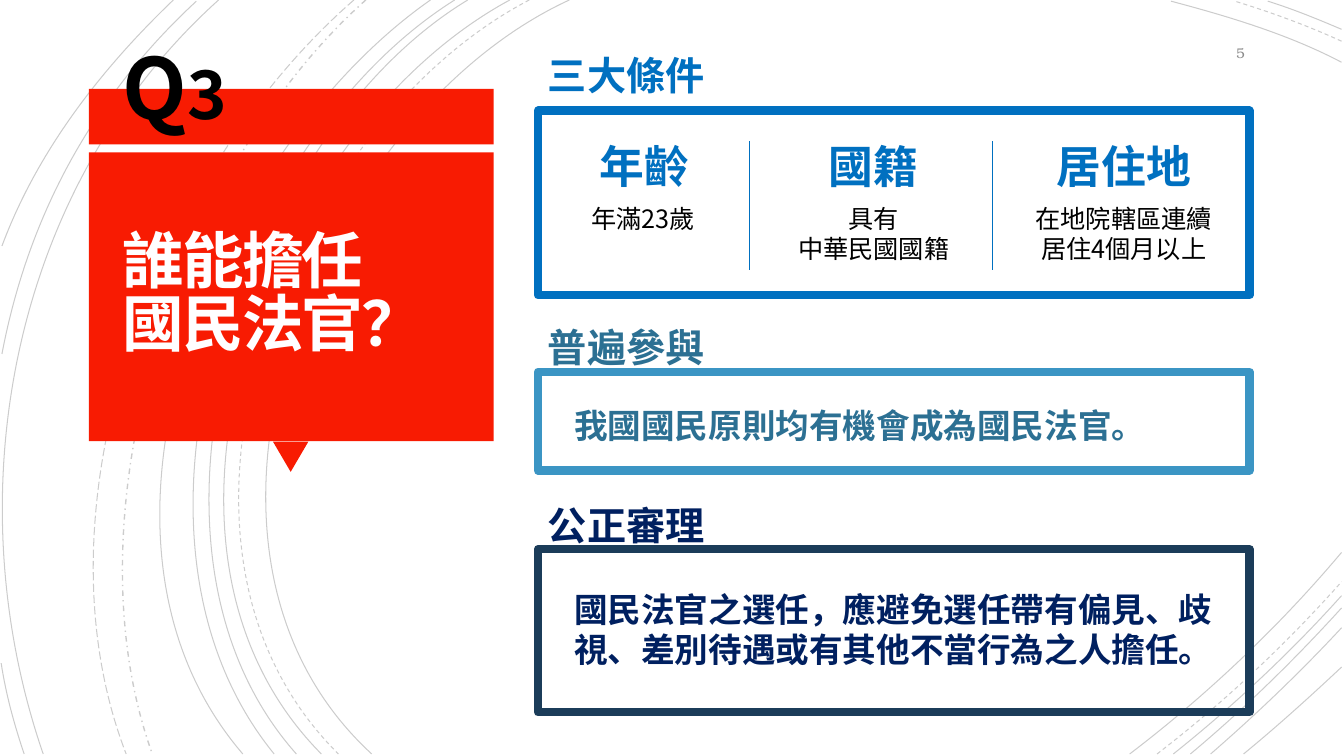
from dataclasses import dataclass

from lxml.etree import SubElement
from pptx import Presentation
from pptx.dml.color import RGBColor
from pptx.enum.dml import MSO_LINE
from pptx.enum.shapes import MSO_CONNECTOR, MSO_SHAPE
from pptx.enum.text import MSO_ANCHOR, PP_ALIGN
from pptx.oxml.ns import qn
from pptx.util import Cm, Pt


@dataclass(frozen=True)
class Theme:
    font: str = "Noto Sans CJK SC"
    number_font: str = "TeX Gyre Bonum"
    black: str = "000000"
    grey: str = "8C8C8C"
    white: str = "FFFEFF"
    red: str = "F81B02"
    blue: str = "0070C0"
    sky: str = "3B95C4"
    teal: str = "2C7093"
    slate: str = "1B3C59"
    navy: str = "002060"
    q_size: int = 60
    digit_size: int = 48
    title_size: int = 44
    condition_size: int = 32
    heading_size: int = 28
    body_size: int = 24
    detail_size: int = 18
    number_size: int = 10
    border: float = 6
    hairline: float = 0.75


THEME = Theme()


def add_run(p, text, size, color=THEME.black, bold=False, font=THEME.font, spacing=0):
    """Append text to a paragraph with its format."""
    r = p.add_run()
    r.text = text
    r.font.size, r.font.bold, r.font.name = Pt(size), bold, font
    r.font.color.rgb = RGBColor.from_string(color)
    SubElement(r.font._element, qn("a:ea"), typeface=font)
    if spacing:
        r.font._element.set("spc", str(int(spacing * 100)))


class SlideBuilder:
    def __init__(self, slide, theme):
        self.shapes, self.theme = slide.shapes, theme

    def text(self, box, text, size, align=PP_ALIGN.LEFT, anchor=MSO_ANCHOR.TOP,
             wrap=True, inset=None, line_spacing=None, **fmt):
        """Text box: \\n parts paragraphs, \\v breaks a line. Returns the last paragraph."""
        tf = self.shapes.add_textbox(*map(Cm, box)).text_frame
        tf.word_wrap, tf.vertical_anchor = wrap, anchor
        if inset is not None:
            tf.margin_left = tf.margin_right = tf.margin_top = tf.margin_bottom = Cm(inset)
        for i, line in enumerate(text.split("\n")):
            p = tf.add_paragraph() if i else tf.paragraphs[0]
            p.alignment, p.line_spacing = align, line_spacing
            for j, part in enumerate(line.split("\v")):
                if j:
                    p.add_line_break()
                add_run(p, part, size, **fmt)
        return p

    def shape(self, kind, box, fill=None, line=None, rotation=0):
        sp = self.shapes.add_shape(kind, *map(Cm, box))
        sp.shadow.inherit = False
        sp.rotation = rotation
        if fill:
            sp.fill.solid()
            sp.fill.fore_color.rgb = RGBColor.from_string(fill)
        else:
            sp.fill.background()
        if line:
            sp.line.color.rgb = RGBColor.from_string(line)
            sp.line.width = Pt(self.theme.border)
        else:
            sp.line.fill.background()

    def divider(self, x, top, bottom):
        ln = self.shapes.add_connector(MSO_CONNECTOR.STRAIGHT, Cm(x), Cm(top), Cm(x), Cm(bottom))
        ln.line.color.rgb = RGBColor.from_string(self.theme.blue)
        ln.line.width = Pt(self.theme.hairline)
        SubElement(ln._element.spPr, qn("a:effectLst"))

    def arc(self, points, dash=None, width=THEME.hairline):
        """Faint cubic curve through start, two control points and end."""
        start, *rest = [(Cm(x), Cm(y)) for x, y in points]
        builder = self.shapes.build_freeform(*start)
        builder.add_line_segments(rest, close=False)
        sp = builder.convert_to_shape()
        outline = sp._element.find(".//" + qn("a:path"))
        bezier = SubElement(outline, qn("a:cubicBezTo"))
        for segment in outline.findall(qn("a:lnTo")):
            bezier.append(segment[0])
            outline.remove(segment)
        sp.shadow.inherit = False
        sp.fill.background()
        sp.line.color.rgb = RGBColor.from_string(self.theme.black)
        sp.line.width = Pt(width)
        color = sp.line._ln.find(".//" + qn("a:srgbClr"))
        SubElement(color, qn("a:alpha"), val="20000")
        if dash:
            sp.line.dash_style = dash

    def section(self, heading, top, height, color, border, lift):
        """Framed block with its heading centred lift above the frame."""
        t = self.theme
        self.text((13.56, top - lift - 1.03, 18.6, 2.06), heading, t.heading_size,
                  anchor=MSO_ANCHOR.MIDDLE, color=color, bold=True)
        self.shape(MSO_SHAPE.RECTANGLE, (13.56, top, 17.93, height), line=border)


# Left arcs run from the top edge to y = 19: start x, two control points, end x
LEFT_ARCS = [
    (14.35, (8.0, 2.92), (3.63, 13.72), 9.37, None, 0.75),
    (13.34, (7.24, 3.18), (3.12, 13.64), 8.53, MSO_LINE.DASH, 0.75),
    (12.85, (6.86, 3.23), (2.79, 13.64), 8.1, None, 0.75),
    (11.79, (6.2, 3.38), (2.79, 13.74), 7.47, None, 0.75),
    (11.46, (5.87, 3.51), (2.46, 13.54), 6.91, None, 0.75),
    (10.85, (5.51, 3.73), (1.35, 13.44), 6.12, None, 0.75),
    (9.22, (4.47, 4.22), (1.65, 12.93), 3.84, MSO_LINE.DASH_DOT, 1),
    (8.92, (3.99, 4.29), (0.74, 12.67), 3.18, MSO_LINE.LONG_DASH, 0.75),
    (5.51, (0.28, 4.7), (-1.17, 12.45), 1.09, None, 0.75),
]
CORNER_ARCS = [
    # Top right
    ([(33.81, 1.57), (32.46, 0.86), (30.94, 0.41), (29.51, 0.03)], None),
    ([(33.81, 1.04), (32.94, 0.64), (32, 0.3), (31.12, 0.03)], MSO_LINE.DASH),
    ([(33.81, 0.74), (33.2, 0.48), (32.59, 0.23), (31.95, 0.03)], None),
    # Bottom right
    ([(28.47, 19), (30.4, 17.53), (32.23, 15.8), (33.81, 13.92)], None),
    ([(29.16, 19), (30.81, 17.73), (32.39, 16.26), (33.81, 14.66)], MSO_LINE.DASH),
    ([(29.57, 19), (31.06, 17.81), (32.51, 16.46), (33.81, 15.01)], None),
    ([(30, 19), (31.34, 17.88), (32.61, 16.64), (33.81, 15.32)], None),
    ([(30.51, 19), (31.65, 18.01), (32.77, 16.94), (33.81, 15.82)], None),
    ([(31.34, 19), (32.18, 18.31), (32.99, 17.58), (33.81, 16.81)], None),
    # Left edge
    ([(4.95, 0.03), (2.34, 2.44), (0.71, 5.44), (0.05, 8.92)], None),
    ([(4.37, 0), (2.54, 1.75), (0.94, 3.81), (0.05, 6.2)], None),
    ([(0.03, 16.71), (0.15, 17.5), (0.36, 18.26), (0.61, 19)], None),
]
# Column centre, name and its width, detail and its width, alignment, wrap
CONDITIONS = [
    (16.24, "年齡", 2.79, "年滿23歲", 3.18, PP_ALIGN.LEFT, True),
    (22.02, "國籍", 2.79, "具有\n中華民國國籍", 4.67, PP_ALIGN.CENTER, True),
    (28.32, "居住地", 3.94, "在地院轄區連續\n居住4個月以上", 5.0, PP_ALIGN.CENTER, False),
]


def main():
    prs = Presentation()
    prs.slide_width, prs.slide_height = Cm(33.87), Cm(19.05)
    t = THEME
    s = SlideBuilder(prs.slides.add_slide(prs.slide_layouts[6]), t)

    # Background arcs
    for x0, c1, c2, x1, dash, width in LEFT_ARCS:
        s.arc([(x0, 0), c1, c2, (x1, 19)], dash, width)
    for points, dash in CORNER_ARCS:
        s.arc(points, dash)

    # Red question panel
    s.shape(MSO_SHAPE.RECTANGLE, (2.24, 2.24, 10.2, 1.4), fill=t.red)
    s.shape(MSO_SHAPE.ISOSCELES_TRIANGLE, (6.88, 11.13, 0.89, 0.76), fill=t.red, rotation=180)
    s.shape(MSO_SHAPE.RECTANGLE, (2.24, 3.84, 10.2, 7.28), fill=t.red)
    s.text((2.46, 4.04, 9.73, 6.83), "誰能擔任\v國民法官？", t.title_size, inset=0.64,
           anchor=MSO_ANCHOR.MIDDLE, line_spacing=0.85, color=t.white, bold=True, spacing=-1.5)
    p = s.text((2.84, 0.76, 3.28, 2.82), "Q", t.q_size, bold=True)
    add_run(p, "3", t.digit_size, bold=True)

    # Slide number
    s.text((29.08, 0.89, 2.54, 0.89), "5", t.number_size, align=PP_ALIGN.RIGHT,
           anchor=MSO_ANCHOR.MIDDLE, color=t.grey, font=t.number_font)

    # Three conditions
    s.section("三大條件", 2.79, 4.65, t.blue, t.blue, lift=0.9)
    for centre, name, name_w, detail, detail_w, align, wrap in CONDITIONS:
        s.text((centre - name_w / 2, 3.38, name_w, 1.63), name, t.condition_size,
               align=PP_ALIGN.CENTER, wrap=False, color=t.blue, bold=True)
        s.text((centre - detail_w / 2, 5, detail_w, 1.8), detail, t.detail_size,
               align=align, wrap=wrap)
    for x in (18.9, 25.02):
        s.divider(x, 3.56, 6.81)

    # Participation and fair trial
    s.section("普遍參與", 9.37, 2.49, t.teal, t.sky, lift=0.62)
    s.text((14.22, 10.08, 17.27, 1.27), "我國國民原則均有機會成為國民法官。",
           t.body_size, color=t.teal, bold=True)
    s.section("公正審理", 13.84, 4.11, t.navy, t.slate, lift=0.62)
    s.text((14.22, 14.71, 17.27, 2.31),
           "國民法官之選任，應避免選任帶有偏見、歧視、差別待遇或有其他不當行為之人擔任。",
           t.body_size, color=t.navy, bold=True)

    prs.save("out.pptx")


if __name__ == "__main__":
    main()
